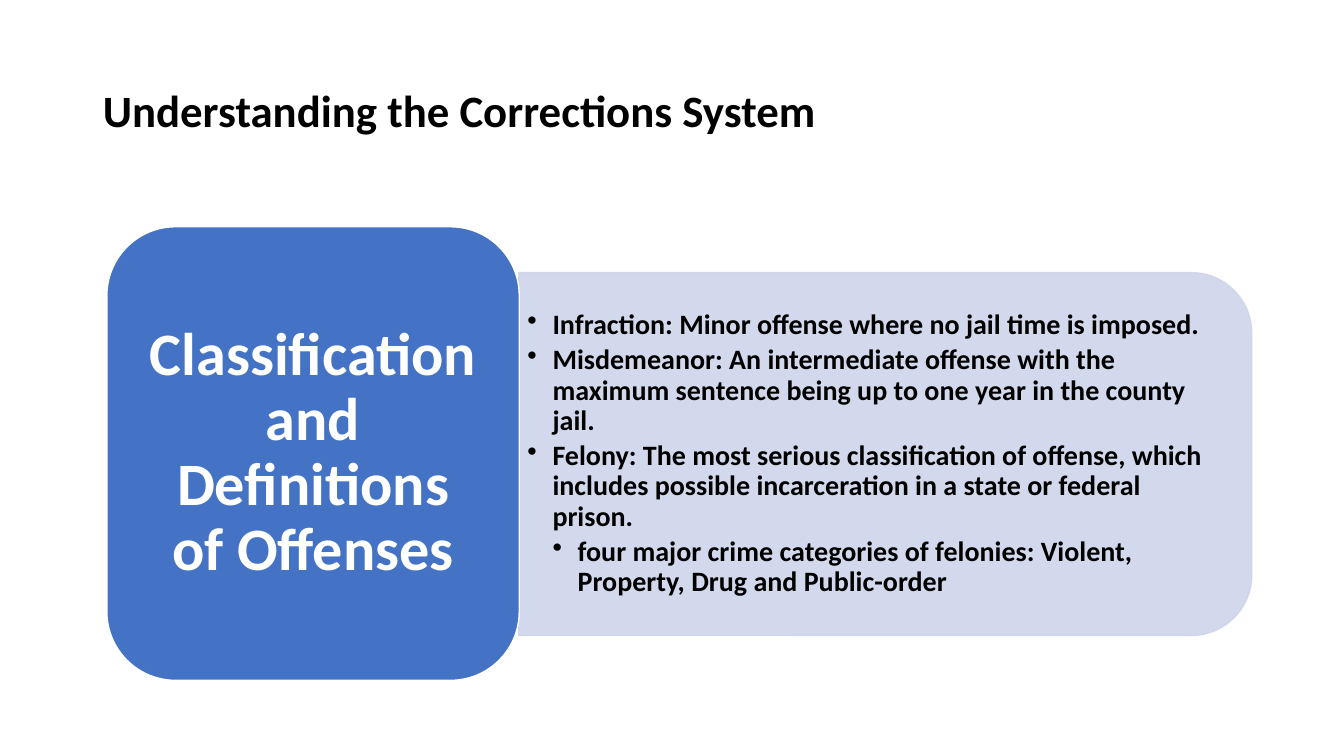
"""Build a slide that classifies and defines criminal offenses."""
from dataclasses import dataclass

import lxml.etree
import pptx
import pptx.dml.color
import pptx.enum.shapes
import pptx.enum.text
import pptx.oxml.ns
import pptx.util

Inches = pptx.util.Inches
Pt = pptx.util.Pt
SHAPES = pptx.enum.shapes.MSO_SHAPE
ALIGN = pptx.enum.text.PP_ALIGN


@dataclass(frozen=True)
class Theme:
    font: str = "Calibri"
    ink: str = "000000"
    paper: str = "FFFFFF"
    card: str = "4472C4"
    panel: str = "CFD5EA"
    title_size: float = 32
    card_size: float = 43
    body_size: float = 20
    line_spacing: float = 0.9
    bullet_step: float = 0.25


class SlideBuilder:
    def __init__(self, slide, theme):
        self.slide = slide
        self.theme = theme

    def _color(self, target, color, opacity=100):
        target.solid()
        target.fore_color.rgb = pptx.dml.color.RGBColor.from_string(color)
        if opacity < 100:
            tag = pptx.oxml.ns.qn("a:srgbClr")
            for node in target._xPr.iter(tag):
                alpha = lxml.etree.SubElement(node, pptx.oxml.ns.qn("a:alpha"))
                alpha.set("val", str(opacity * 1000))

    def _frame(self, shape, insets):
        frame = shape.text_frame
        frame.word_wrap = True
        frame.auto_size = pptx.enum.text.MSO_AUTO_SIZE.NONE
        frame.vertical_anchor = pptx.enum.text.MSO_ANCHOR.MIDDLE
        frame.margin_left = frame.margin_right = Inches(insets[0])
        frame.margin_top = frame.margin_bottom = Inches(insets[1])
        return frame

    def _write(self, paragraph, words, size, color, align=ALIGN.LEFT, after=0):
        paragraph.alignment = align
        paragraph.line_spacing = self.theme.line_spacing
        paragraph.space_before = Pt(0)
        paragraph.space_after = Pt(after)
        run = paragraph.add_run()
        run.text = words
        run.font.name = self.theme.font
        run.font.size = Pt(size)
        run.font.bold = True
        run.font.color.rgb = pptx.dml.color.RGBColor.from_string(color)

    def title(self, words, box):
        heading = self.slide.shapes.title
        heading.left, heading.top, heading.width, heading.height = map(Inches, box)
        frame = self._frame(heading, (0.1, 0.05))
        self._write(frame.paragraphs[0], words, self.theme.title_size, self.theme.ink)

    def shape(self, kind, box, fill, line, opacity=100, rotation=0):
        block = self.slide.shapes.add_shape(kind, *map(Inches, box))
        block.rotation = rotation
        block.shadow.inherit = False
        self._color(block.fill, fill, opacity)
        self._color(block.line.fill, line, opacity)
        block.line.width = Pt(1)
        return block

    def card(self, words, box):
        theme = self.theme
        card = self.shape(SHAPES.ROUNDED_RECTANGLE, box, theme.card, theme.paper)
        frame = self._frame(card, (0.18, 0.09))
        self._write(frame.paragraphs[0], words, theme.card_size, theme.paper, ALIGN.CENTER)

    def bullets(self, items, box):
        theme = self.theme
        frame = self._frame(self.slide.shapes.add_textbox(*map(Inches, box)), (0.08, 0.04))
        for index, (level, words) in enumerate(items):
            paragraph = frame.add_paragraph() if index else frame.paragraphs[0]
            paragraph.level = level
            self._write(paragraph, words, theme.body_size, theme.ink, after=3.6)
            properties = paragraph._p.get_or_add_pPr()
            properties.set("marL", str(Inches(theme.bullet_step * level)))
            properties.set("indent", str(-Inches(theme.bullet_step)))
            bullet = lxml.etree.SubElement(properties, pptx.oxml.ns.qn("a:buChar"))
            bullet.set("char", "•")


def main():
    deck = pptx.Presentation()
    deck.slide_width = Inches(13.33)
    deck.slide_height = Inches(7.5)
    theme = Theme()
    builder = SlideBuilder(deck.slides.add_slide(deck.slide_layouts[5]), theme)

    builder.title("Understanding the Corrections System", (0.92, 0.4, 11.5, 1.45))
    builder.shape(SHAPES.ROUND_2_SAME_RECTANGLE, (6.98, 0.87, 3.6, 7.27),
                  theme.panel, theme.panel, opacity=90, rotation=90)
    offenses = [
        (1, "Infraction: Minor offense where no jail time is imposed."),
        (1, "Misdemeanor: An intermediate offense with the maximum sentence "
            "being up to one year in the county jail."),
        (1, "Felony: The most serious classification of offense, which includes "
            "possible incarceration in a state or federal prison."),
        (2, "four major crime categories of felonies: Violent, Property, "
            "Drug and Public-order"),
    ]
    builder.bullets(offenses, (5.15, 2.88, 7.09, 3.25))
    builder.card("Classification and Definitions of Offenses", (1.06, 2.25, 4.09, 4.5))
    deck.save("out.pptx")


if __name__ == "__main__":
    main()
